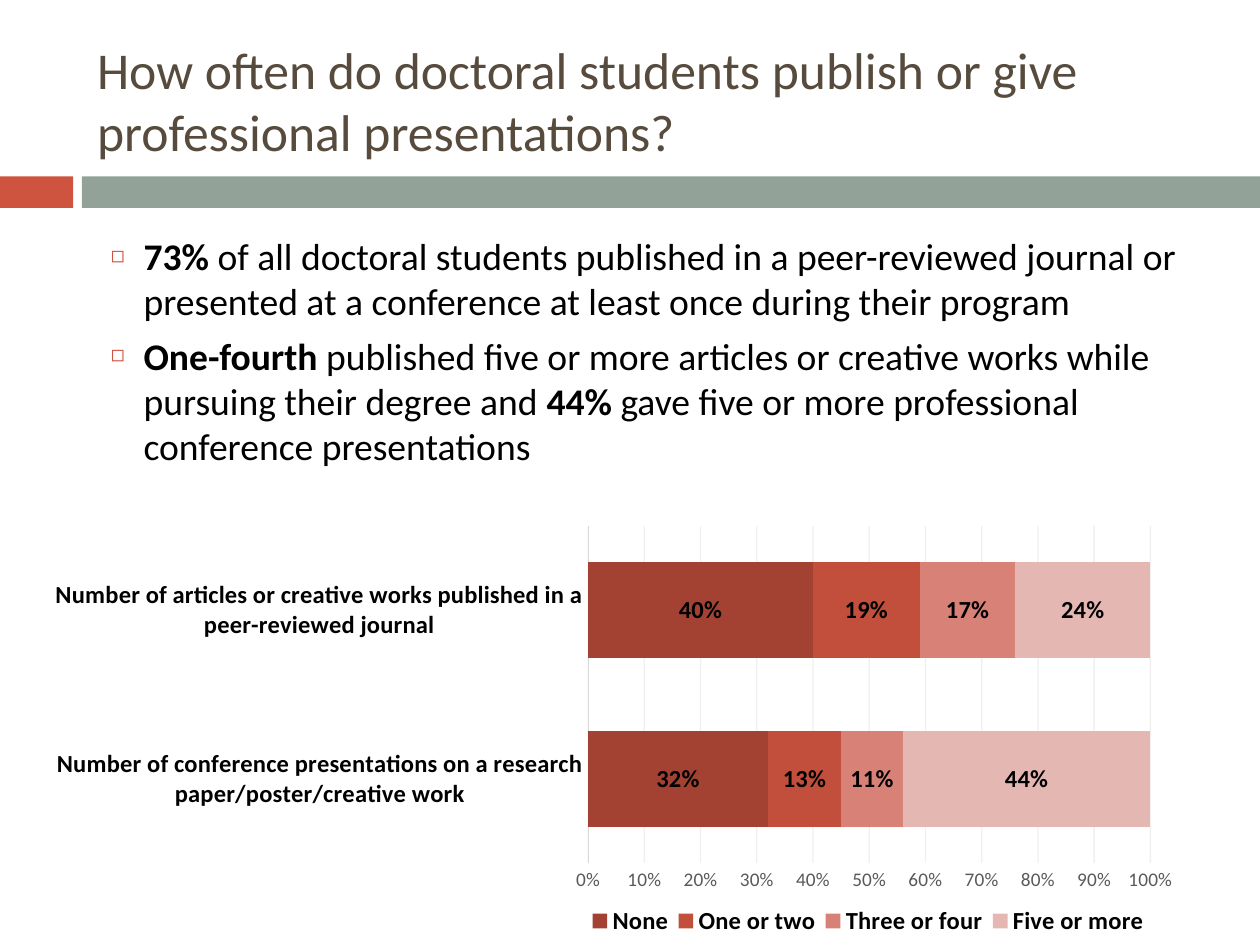
from lxml import etree
from pptx import Presentation
from pptx.chart.data import CategoryChartData
from pptx.dml.color import RGBColor
from pptx.enum.chart import XL_CHART_TYPE, XL_LEGEND_POSITION, XL_TICK_MARK
from pptx.enum.shapes import MSO_SHAPE
from pptx.enum.text import MSO_ANCHOR, MSO_AUTO_SIZE, PP_ALIGN
from pptx.oxml.ns import qn
from pptx.util import Pt

PX = 9144
FONT = "Calibri"
RECT = MSO_SHAPE.RECTANGLE
STACK = XL_CHART_TYPE.BAR_STACKED_100
BOTTOM = XL_LEGEND_POSITION.BOTTOM
NO_TICK = XL_TICK_MARK.NONE
MIDDLE, TOP = MSO_ANCHOR.MIDDLE, MSO_ANCHOR.TOP
LEFT = PP_ALIGN.LEFT
NO_FIT = MSO_AUTO_SIZE.NONE

BLACK = RGBColor(0x00, 0x00, 0x00)
BROWN = RGBColor(0x56, 0x4B, 0x3C)
RED = RGBColor(0xCF, 0x54, 0x3F)
SAGE = RGBColor(0x93, 0xA2, 0x99)
GRAY = RGBColor(0x59, 0x59, 0x59)
RULE = RGBColor(0xD9, 0xD9, 0xD9)
GRID = RGBColor(0xE4, 0xE1, 0xE3)

TITLE = "How often do doctoral students publish or give professional presentations?"
POINTS = [
    [("73% ", True),
     ("of all doctoral students published in a peer-reviewed journal or presented "
      "at a conference at least once during their program", False)],
    [("One-fourth", True),
     (" published five or more articles or creative works while pursuing their "
      "degree and ", False),
     ("44% ", True),
     ("gave five or more professional conference presentations", False)],
]
GROUPS = [
    "Number of conference presentations on a research paper/poster/creative work",
    "Number of articles or creative works published in a peer-reviewed journal",
]
SERIES = [
    ("None", (0.32, 0.40), RGBColor(0xA3, 0x42, 0x32)),
    ("One or two", (0.13, 0.19), RGBColor(0xC2, 0x4F, 0x3B)),
    ("Three or four", (0.11, 0.17), RGBColor(0xD7, 0x81, 0x77)),
    ("Five or more", (0.44, 0.24), RGBColor(0xE5, 0xB7, 0xB3)),
]


def place(shape, box):
    shape.left, shape.top, shape.width, shape.height = (n * PX for n in box)


def style(font, size, color=BLACK, bold=False):
    font.name, font.size, font.bold = FONT, Pt(size), bold
    font.color.rgb = color


def write(shape, lines, size, color=BLACK, anchor=TOP, space=0, bullet=None):
    frame = shape.text_frame
    frame.word_wrap = True
    frame.auto_size = NO_FIT
    frame.vertical_anchor = anchor
    for i, runs in enumerate(lines):
        para = frame.paragraphs[0] if i == 0 else frame.add_paragraph()
        para.alignment = LEFT
        para.space_before = Pt(space)
        for text, bold in runs:
            run = para.add_run()
            run.text = text
            style(run.font, size, color, bold)
        if bullet:
            mark(para, bullet)


def mark(para, sign):
    props = para._p.get_or_add_pPr()
    props.set("marL", str(26 * PX))
    props.set("indent", str(-26 * PX))
    tint = etree.SubElement(props, qn("a:buClr"))
    etree.SubElement(tint, qn("a:srgbClr"), val=str(RED))
    etree.SubElement(props, qn("a:buSzPct"), val="60000")
    etree.SubElement(props, qn("a:buChar"), char=sign)


def band(slide, box):
    x, y, w, h = box
    tab, gap = 58, 7
    parts = [(x, tab, RED), (x + tab + gap, w - tab - gap, SAGE)]
    for left, wide, color in parts:
        bar = slide.shapes.add_shape(RECT, 0, 0, 0, 0)
        place(bar, (left, y, wide, h))
        bar.shadow.inherit = False
        bar.fill.solid()
        bar.fill.fore_color.rgb = color
        bar.line.fill.background()


def header(slide, box):
    title = slide.shapes.title
    place(title, box)
    write(title, [[(TITLE, False)]], 29.5, color=BROWN, anchor=MIDDLE)


def points(slide, box):
    body = slide.placeholders[1]
    place(body, box)
    write(body, POINTS, 21.5, space=5.2, bullet="◻")


def fix(part, spot, area, inner=False):
    old = part.find(qn("c:layout"))
    if old is not None:
        part.remove(old)
    layout = etree.Element(qn("c:layout"))
    part.insert(spot, layout)
    manual = etree.SubElement(layout, qn("c:manualLayout"))
    rules = [("layoutTarget", "inner")] if inner else []
    rules += [("xMode", "edge"), ("yMode", "edge")]
    rules += zip("xywh", area)
    for name, value in rules:
        etree.SubElement(manual, qn("c:" + name), val=str(value))


def axes(chart):
    cat, val = chart.category_axis, chart.value_axis
    for axis in (cat, val):
        axis.major_tick_mark = axis.minor_tick_mark = NO_TICK
    style(cat.tick_labels.font, 14, bold=True)
    cat.format.line.color.rgb = RULE
    cat.format.line.width = Pt(0.75)
    style(val.tick_labels.font, 11, GRAY)
    val.tick_labels.number_format = "0%"
    val.tick_labels.number_format_is_linked = False
    val.minimum_scale, val.maximum_scale, val.major_unit = 0, 1, 0.1
    val.format.line.fill.background()
    val.has_major_gridlines = True
    line = val.major_gridlines.format.line
    line.color.rgb = GRID
    line.width = Pt(0.75)
    tint = next(val.major_gridlines._xAx.iter(qn("c:majorGridlines")))
    tint = next(tint.iter(qn("a:srgbClr")))
    etree.SubElement(tint, qn("a:alpha"), val="50000")


def graph(slide, box):
    data = CategoryChartData(number_format="0%")
    data.categories = GROUPS
    for name, values, _ in SERIES:
        data.add_series(name, values)
    frame = slide.shapes.add_chart(STACK, *(n * PX for n in box), data)
    chart = frame.chart
    chart.has_title = False
    style(chart.font, 10)
    axes(chart)
    plot = chart.plots[0]
    plot.gap_width, plot.overlap = 75, 100
    plot.vary_by_categories = False
    for series, (_, _, color) in zip(plot.series, SERIES):
        series.format.fill.solid()
        series.format.fill.fore_color.rgb = color
        labels = series.data_labels
        labels.show_value = True
        labels.number_format = "0%"
        labels.number_format_is_linked = False
        style(labels.font, 14, bold=True)
    chart.has_legend = True
    legend = chart.legend
    legend.position = BOTTOM
    legend.include_in_layout = False
    style(legend.font, 14, bold=True)
    area = chart._chartSpace.chart.plotArea
    fix(area, 0, (0.475, 0.039, 0.492, 0.773), inner=True)
    fix(legend._element, 1, (0.47, 0.9, 0.5, 0.09))


def main():
    deck = Presentation()
    deck.slide_width, deck.slide_height = 1000 * PX, 750 * PX
    slide = deck.slides.add_slide(deck.slide_layouts[1])
    band(slide, (0, 140, 1000, 25))
    header(slide, (67, 25, 892, 108))
    graph(slide, (36, 404, 907, 346))
    points(slide, (78, 180, 872, 283))
    deck.save("out.pptx")


if __name__ == "__main__":
    main()
